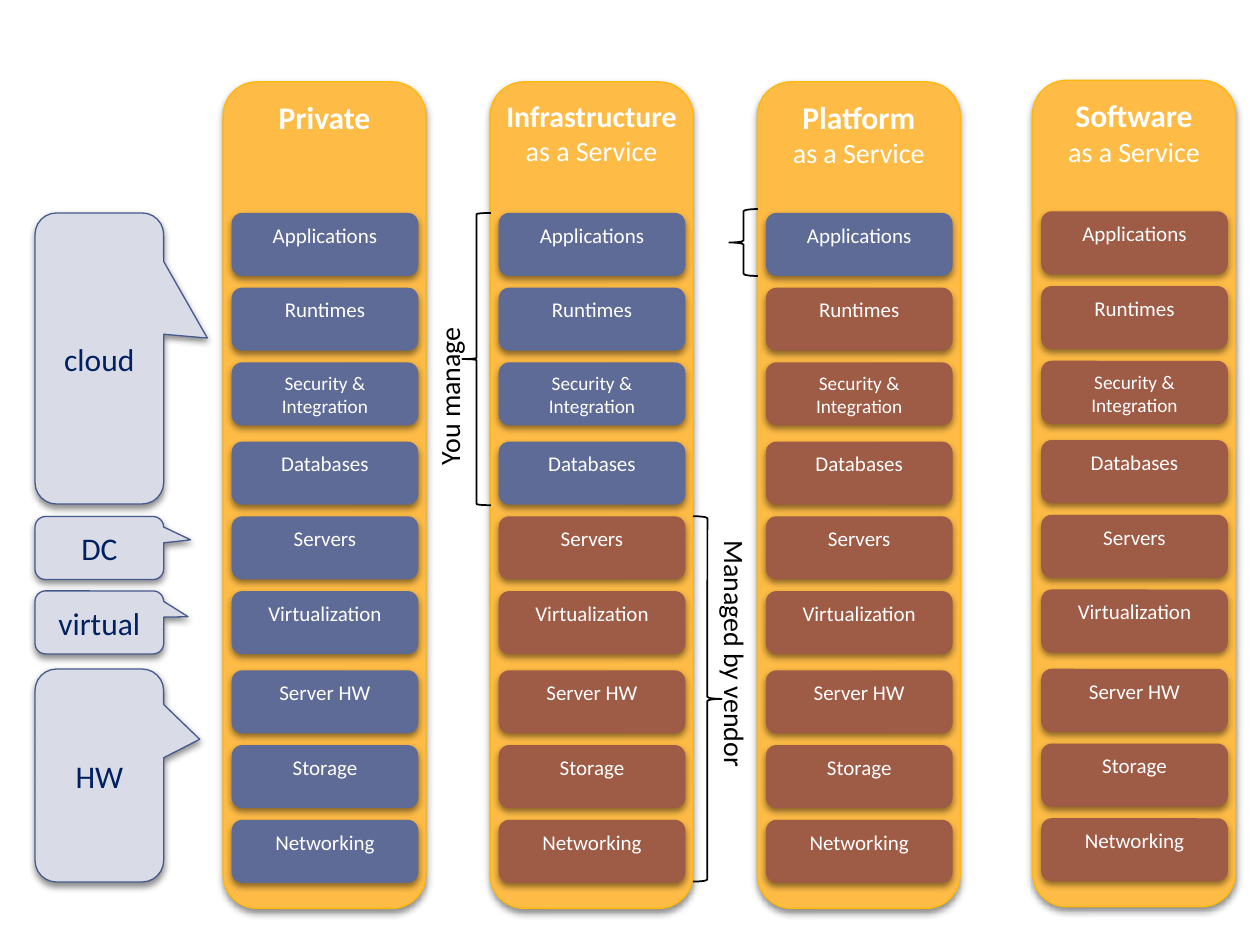
from dataclasses import dataclass
from typing import Optional

import lxml.etree
import pptx
import pptx.dml.color
import pptx.enum.shapes
import pptx.enum.text
import pptx.oxml.ns
import pptx.util

Pt = pptx.util.Pt
RGBColor = pptx.dml.color.RGBColor
MSO_SHAPE = pptx.enum.shapes.MSO_SHAPE
PP_ALIGN = pptx.enum.text.PP_ALIGN
MSO_ANCHOR = pptx.enum.text.MSO_ANCHOR
qn = pptx.oxml.ns.qn

WHITE = RGBColor(0xFF, 0xFF, 0xFF)
BLACK = RGBColor(0x00, 0x00, 0x00)
AMBER = RGBColor(0xFE, 0xBC, 0x46)
AMBER_EDGE = RGBColor(0xFE, 0xB8, 0x0A)
BLUE = RGBColor(0x5E, 0x6B, 0x96)
RUST = RGBColor(0x9E, 0x5B, 0x45)
PALE = RGBColor(0xD9, 0xDC, 0xE7)
PALE_EDGE = RGBColor(0x47, 0x5A, 0x8D)
NAVY = RGBColor(0x00, 0x20, 0x60)

FONT = "Calibri"
COL_W, COL_H = 115.9, 472.3
ROW_W, ROW_H = 106.6, 36
ROW_INSET, ROW_TOP = 4.9, 74.9
ROW_PITCH, TIER_PITCH = 42.7, 130.7
LAYERS = [
    "Applications", "Runtimes", "Security & Integration",
    "Databases", "Servers", "Virtualization",
    "Server HW", "Storage", "Networking",
]


@dataclass
class Column:
    left: float
    top: float
    title: str
    subtitle: str
    managed: int
    title_size: float = 18
    side_inset: float = 7.2


@dataclass
class Callout:
    text: str
    top: float
    height: float
    tip_x: float
    tip_y: float


@dataclass
class Brace:
    kind: MSO_SHAPE
    left: float
    top: float
    height: float
    curve: float


@dataclass
class SideLabel:
    text: str
    left: float
    top: float
    height: float
    direction: str
    wrap: bool


COLUMNS = [
    Column(127.5, 46.8, "Private", "", 9),
    Column(280.1, 46.8, "Infrastructure", "as a Service", 4, 17, 0),
    Column(432.8, 46.8, "Platform", "as a Service", 1),
    Column(590.1, 45.9, "Software", "as a Service", 0),
]
CALLOUTS = [
    Callout("HW", 382.3, 121.7, 0.78, -0.17),
    Callout("virtual", 337.7, 36, 0.69, -0.09),
    Callout("DC", 295.2, 36, 0.71, -0.13),
    Callout("cloud", 121.7, 166.3, 0.84, -0.07),
]
BRACES = [
    Brace(MSO_SHAPE.RIGHT_BRACE, 396, 295, 208.8, 0.07),
    Brace(MSO_SHAPE.LEFT_BRACE, 264.1, 121.7, 167, 0.04),
    Brace(MSO_SHAPE.LEFT_BRACE, 416.7, 119.5, 38.2, 0.07),
]
SIDE_LABELS = [
    SideLabel("Managed by vendor", 401.8, 301.7, 184.3, "eaVert", False),
    SideLabel("You manage", 243.4, 139.7, 133.2, "vert270", True),
]


def add_text(p, text: str, size: float, color: RGBColor, bold: bool = False) -> None:
    r = p.add_run()
    r.text = text
    r.font.name = FONT
    r.font.size = Pt(size)
    r.font.bold = bold
    r.font.color.rgb = color


def add_shadow(sp) -> None:
    effects = sp.element.spPr.find(qn("a:effectLst"))
    shadow = lxml.etree.SubElement(
        effects, qn("a:outerShdw"), blurRad=str(Pt(4)), dist=str(Pt(2)),
        dir="5400000", algn="ctr", rotWithShape="0")
    color = lxml.etree.SubElement(shadow, qn("a:srgbClr"), val=str(BLACK))
    lxml.etree.SubElement(color, qn("a:alpha"), val="45000")


def add_panel(s, kind: MSO_SHAPE, left: float, top: float, width: float,
              height: float, fill: RGBColor, line: Optional[RGBColor] = None,
              anchor: MSO_ANCHOR = MSO_ANCHOR.TOP):
    sp = s.shapes.add_shape(kind, Pt(left), Pt(top), Pt(width), Pt(height))
    sp.shadow.inherit = False
    sp.fill.solid()
    sp.fill.fore_color.rgb = fill
    if line is None:
        sp.line.fill.background()
    else:
        sp.line.color.rgb = line
        sp.line.width = Pt(0.75)
    add_shadow(sp)
    sp.text_frame.word_wrap = True
    sp.text_frame.vertical_anchor = anchor
    sp.text_frame.paragraphs[0].alignment = PP_ALIGN.CENTER
    return sp


def draw_column(s, col: Column) -> None:
    sp = add_panel(s, MSO_SHAPE.ROUNDED_RECTANGLE, col.left, col.top,
                   COL_W, COL_H, AMBER, AMBER_EDGE)
    tf = sp.text_frame
    tf.margin_left = tf.margin_right = Pt(col.side_inset)
    add_text(tf.paragraphs[0], col.title, col.title_size, WHITE, True)
    if col.subtitle:
        p = tf.add_paragraph()
        p.alignment = PP_ALIGN.CENTER
        add_text(p, col.subtitle, 16, WHITE)
    for i, layer in enumerate(LAYERS):
        tier, row = divmod(i, 3)
        top = col.top + ROW_TOP + tier * TIER_PITCH + row * ROW_PITCH
        fill = BLUE if i < col.managed else RUST
        sp = add_panel(s, MSO_SHAPE.ROUNDED_RECTANGLE, col.left + ROW_INSET,
                       top, ROW_W, ROW_H, fill)
        size = 11 if "&" in layer else 12
        add_text(sp.text_frame.paragraphs[0], layer, size, WHITE)


def draw_callout(s, c: Callout) -> None:
    sp = add_panel(s, MSO_SHAPE.ROUNDED_RECTANGULAR_CALLOUT, 20, c.top, 73.5,
                   c.height, PALE, PALE_EDGE, MSO_ANCHOR.MIDDLE)
    sp.adjustments[0] = c.tip_x
    sp.adjustments[1] = c.tip_y
    add_text(sp.text_frame.paragraphs[0], c.text, 18, NAVY)


def draw_brace(s, b: Brace) -> None:
    sp = s.shapes.add_shape(b.kind, Pt(b.left), Pt(b.top), Pt(16.4), Pt(b.height))
    sp.shadow.inherit = False
    sp.adjustments[0] = b.curve
    sp.fill.background()
    sp.line.color.rgb = BLACK
    sp.line.width = Pt(1)


def draw_side_label(s, label: SideLabel) -> None:
    sp = s.shapes.add_textbox(Pt(label.left), Pt(label.top), Pt(31.5), Pt(label.height))
    tf = sp.text_frame
    tf.word_wrap = label.wrap
    sp.element.txBody.bodyPr.set("vert", label.direction)
    add_text(tf.paragraphs[0], label.text, 16, BLACK)


def main() -> None:
    prs = pptx.Presentation()
    prs.slide_width, prs.slide_height = Pt(720), Pt(540)
    s = prs.slides.add_slide(prs.slide_layouts[6])
    for col in COLUMNS:
        draw_column(s, col)
    for brace in BRACES:
        draw_brace(s, brace)
    for label in SIDE_LABELS:
        draw_side_label(s, label)
    for callout in CALLOUTS:
        draw_callout(s, callout)
    prs.save("out.pptx")


if __name__ == "__main__":
    main()
